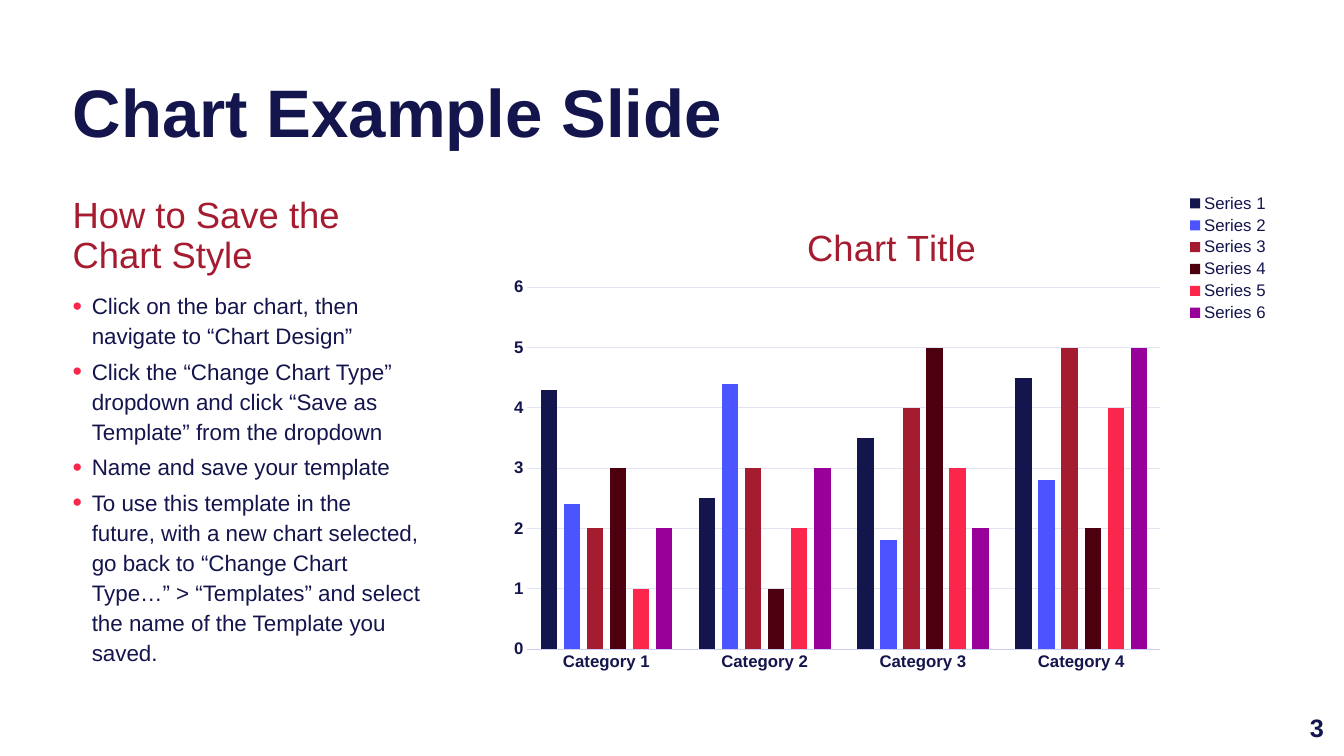
from lxml import etree
from pptx import Presentation
from pptx.chart.data import CategoryChartData
from pptx.dml.color import RGBColor
from pptx.enum.chart import XL_CHART_TYPE, XL_LEGEND_POSITION, XL_TICK_MARK
from pptx.enum.text import MSO_ANCHOR, MSO_AUTO_SIZE, PP_ALIGN
from pptx.oxml.ns import qn
from pptx.util import Inches, Pt

COLUMNS = XL_CHART_TYPE.COLUMN_CLUSTERED
CORNER = XL_LEGEND_POSITION.CORNER
NO_TICK = XL_TICK_MARK.NONE
TOP = MSO_ANCHOR.TOP
NO_FIT = MSO_AUTO_SIZE.NONE
LEFT, RIGHT = PP_ALIGN.LEFT, PP_ALIGN.RIGHT

FONT = "Arial"
COLORS = {
    "navy": "14154C", "blue": "4C54FF", "crimson": "A51C30", "maroon": "4C000F",
    "red": "FB264C", "purple": "980099", "axis": "CECEF2", "grid": "E3E3F5",
}

TITLE = "Chart Example Slide"
HEADING = "How to Save the Chart Style"
STEPS = [
    "Click on the bar chart, then navigate to “Chart Design”",
    "Click the “Change Chart Type” dropdown and click “Save as Template” from the dropdown",
    "Name and save your template",
    "To use this template in the future, with a new chart selected, go back to "
    "“Change Chart Type…” > “Templates” and select the name of the Template you saved.",
]
PAGE = "3"
CHART_TITLE = "Chart Title"
CATEGORIES = ["Category 1", "Category 2", "Category 3", "Category 4"]
SERIES = [
    ("Series 1", (4.3, 2.5, 3.5, 4.5), "navy"),
    ("Series 2", (2.4, 4.4, 1.8, 2.8), "blue"),
    ("Series 3", (2, 3, 4, 5), "crimson"),
    ("Series 4", (3, 1, 5, 2), "maroon"),
    ("Series 5", (1, 2, 3, 4), "red"),
    ("Series 6", (2, 3, 2, 5), "purple"),
]

# left, top, width, height in inches
TITLE_BOX = (0.72, 0.74, 11.86, 1.1)
HEADING_BOX = (0.72, 1.89, 3.45, 0.93)
STEPS_BOX = (0.72, 2.82, 3.45, 3.94)
CHART_BOX = (4.96, 1.89, 7.65, 4.86)
PLOT_BOX = (5.23, 2.85, 6.28, 3.59)
CHART_TITLE_AT = (7.94, 2.15)
PAGE_BOX = (12.7, 7.02, 0.53, 0.4)


def rgb(name):
    return RGBColor.from_string(COLORS[name])


def style(font, size, color="navy", bold=False):
    font.name, font.size, font.bold = FONT, Pt(size), bold
    font.color.rgb = rgb(color)


def add_run(p, text, size, color="navy", bold=False):
    r = p.add_run()
    r.text = text
    style(r.font, size, color, bold)


def set_frame(tf, side=0):
    tf.word_wrap = True
    tf.auto_size = NO_FIT
    tf.vertical_anchor = TOP
    tf.margin_left = tf.margin_right = Inches(side)
    tf.margin_top = tf.margin_bottom = Inches(0.05)


def add_text(slide, box, side=0):
    tf = slide.shapes.add_textbox(*map(Inches, box)).text_frame
    set_frame(tf, side)
    return tf


def add_bullet(p):
    pPr = p._p.get_or_add_pPr()
    pPr.set("marL", str(Inches(0.19)))
    pPr.set("indent", str(Inches(-0.19)))
    color = etree.SubElement(pPr, qn("a:buClr"))
    etree.SubElement(color, qn("a:srgbClr"), val=COLORS["red"])
    etree.SubElement(pPr, qn("a:buSzPct"), val="120000")
    etree.SubElement(pPr, qn("a:buFont"), typeface=FONT)
    etree.SubElement(pPr, qn("a:buChar"), char="•")


def place_in_chart(parent, index, box, inner=False):
    """Give a chart part a fixed place; box is in slide inches."""
    layout = parent.find(qn("c:layout"))
    if layout is not None:
        parent.remove(layout)
    layout = etree.Element(qn("c:layout"))
    parent.insert(index, layout)
    manual = etree.SubElement(layout, qn("c:manualLayout"))
    if inner:
        etree.SubElement(manual, qn("c:layoutTarget"), val="inner")
    left, top, width, height = CHART_BOX
    shares = [(box[0] - left) / width, (box[1] - top) / height]
    if len(box) == 4:
        shares += [box[2] / width, box[3] / height]
    for mode in ("xMode", "yMode"):
        etree.SubElement(manual, qn("c:" + mode), val="edge")
    for key, share in zip("xywh", shares):
        etree.SubElement(manual, qn("c:" + key), val=f"{share:.4f}")


def add_column_chart(slide):
    data = CategoryChartData()
    data.categories = CATEGORIES
    for name, values, _ in SERIES:
        data.add_series(name, values)
    chart = slide.shapes.add_chart(COLUMNS, *map(Inches, CHART_BOX), data).chart
    style(chart.font, 10)

    plot = chart.plots[0]
    plot.gap_width, plot.overlap, plot.vary_by_categories = 162, -40, False
    for series, (_, _, color) in zip(plot.series, SERIES):
        series.format.fill.solid()
        series.format.fill.fore_color.rgb = rgb(color)

    for axis in (chart.category_axis, chart.value_axis):
        axis.major_tick_mark = axis.minor_tick_mark = NO_TICK
        style(axis.tick_labels.font, 12, bold=True)
    value_axis = chart.value_axis
    value_axis.minimum_scale, value_axis.maximum_scale, value_axis.major_unit = 0, 6, 1
    value_axis.format.line.fill.background()
    for line, color in ((chart.category_axis.format.line, "axis"),
                        (value_axis.major_gridlines.format.line, "grid")):
        line.color.rgb = rgb(color)
        line.width = Pt(0.75)

    chart.has_legend = True
    chart.legend.position = CORNER
    chart.legend.include_in_layout = False
    style(chart.legend.font, 12)

    chart.has_title = True
    title = chart.chart_title
    add_run(title.text_frame.paragraphs[0], CHART_TITLE, 26, "crimson")
    place_in_chart(title._element, 1, CHART_TITLE_AT)
    place_in_chart(chart._chartSpace.chart.plotArea, 0, PLOT_BOX, inner=True)


def main():
    prs = Presentation()
    prs.slide_width, prs.slide_height = Inches(13.33), Inches(7.5)
    slide = prs.slides.add_slide(prs.slide_layouts[5])

    title = slide.shapes.title
    title.left, title.top, title.width, title.height = map(Inches, TITLE_BOX)
    set_frame(title.text_frame)
    p = title.text_frame.paragraphs[0]
    p.alignment, p.line_spacing = LEFT, 0.9
    add_run(p, TITLE, 48, bold=True)

    p = add_text(slide, HEADING_BOX).paragraphs[0]
    p.line_spacing = Pt(28.6)
    add_run(p, HEADING, 26, "crimson")

    tf = add_text(slide, STEPS_BOX)
    for i, step in enumerate(STEPS):
        p = tf.add_paragraph() if i else tf.paragraphs[0]
        p.line_spacing = Pt(21.4)
        p.space_before = Pt(4 if i else 0)
        add_bullet(p)
        add_run(p, step, 16)

    add_column_chart(slide)

    p = add_text(slide, PAGE_BOX, side=0.1).paragraphs[0]
    p.alignment = RIGHT
    add_run(p, PAGE, 18, bold=True)

    prs.save("out.pptx")


if __name__ == "__main__":
    main()
